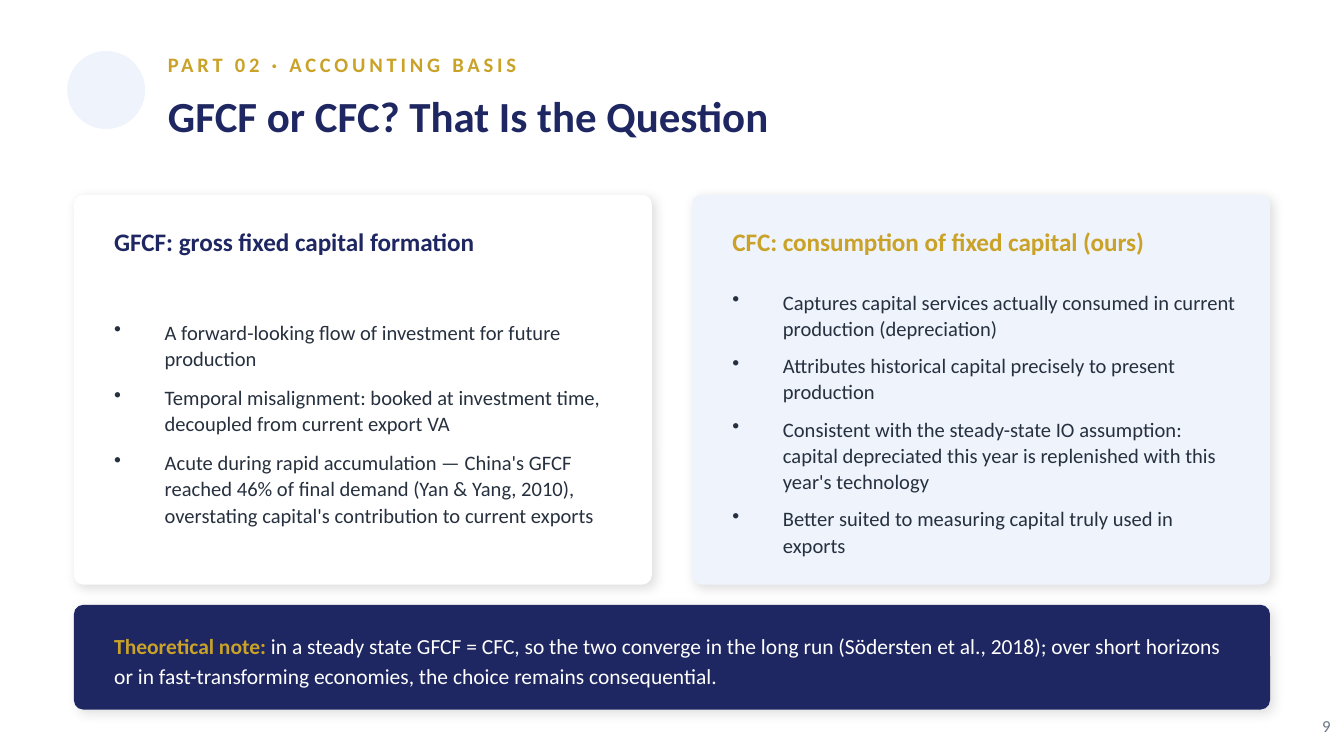
from lxml.etree import SubElement
from pptx import Presentation
from pptx.dml.color import RGBColor
from pptx.enum.shapes import MSO_SHAPE
from pptx.enum.text import MSO_ANCHOR, PP_ALIGN
from pptx.oxml.ns import qn
from pptx.util import Inches, Pt

COLORS = {
    "navy": "1E2761",
    "gold": "C9A227",
    "pale": "EEF3FC",
    "white": "FFFFFF",
    "ink": "26303E",
    "gray": "6B7585",
    "shadow": "000000",
}
FONT = "Calibri"

SECTION = "PART 02 · ACCOUNTING BASIS"
TITLE = "GFCF or CFC? That Is the Question"
PAGE_NUMBER = "9"
CARDS = [
    {
        "heading": "GFCF: gross fixed capital formation",
        "heading_color": "navy",
        "heading_width": 3.8,
        "fill": "white",
        "space_after": 7,
        "bullets": [
            "A forward-looking flow of investment for future production",
            "Temporal misalignment: booked at investment time, decoupled from current export VA",
            "Acute during rapid accumulation — China's GFCF reached 46% of final demand "
            "(Yan & Yang, 2010), overstating capital's contribution to current exports",
        ],
    },
    {
        "heading": "CFC: consumption of fixed capital (ours)",
        "heading_color": "gold",
        "heading_width": 3.9,
        "fill": "pale",
        "space_after": 6,
        "bullets": [
            "Captures capital services actually consumed in current production (depreciation)",
            "Attributes historical capital precisely to present production",
            "Consistent with the steady-state IO assumption: capital depreciated this year "
            "is replenished with this year's technology",
            "Better suited to measuring capital truly used in exports",
        ],
    },
]
NOTE = [
    ("Theoretical note: ", "gold", True),
    ("in a steady state GFCF = CFC, so the two converge in the long run "
     "(Södersten et al., 2018); over short horizons or in fast-transforming "
     "economies, the choice remains consequential.", "white", False),
]

SLIDE_WIDTH = 10
SLIDE_HEIGHT = SLIDE_WIDTH * 9 / 16
MARGIN = 0.55
GUTTER = 0.3
PADDING = 0.3
CONTENT_WIDTH = SLIDE_WIDTH - 2 * MARGIN
CARD_WIDTH = (CONTENT_WIDTH - GUTTER) / len(CARDS)
CARD_TOP, CARD_HEIGHT = 1.45, 2.9
NOTE_TOP, NOTE_HEIGHT = 4.5, 0.78
HEADER_LEFT = 1.25
BULLET_INDENT = Pt(27)


def add_soft_shadow(shape):
    effects = SubElement(shape._element.spPr, qn("a:effectLst"))
    shadow = SubElement(effects, qn("a:outerShdw"), blurRad=str(Pt(6)), dist=str(Pt(2)),
                        dir=str(45 * 60000), algn="bl", rotWithShape="0")
    color = SubElement(shadow, qn("a:srgbClr"), val=COLORS["shadow"])
    SubElement(color, qn("a:alpha"), val="13000")


def add_panel(slide, kind, left, top, width, height, fill, corner=None):
    """Add a borderless shape; a corner ratio makes it a raised card."""
    shape = slide.shapes.add_shape(kind, *map(Inches, (left, top, width, height)))
    shape.fill.solid()
    shape.fill.fore_color.rgb = RGBColor.from_string(COLORS[fill])
    shape.line.fill.background()
    if corner is None:
        shape.shadow.inherit = False
    else:
        shape.adjustments[0] = corner
        add_soft_shadow(shape)


def add_bullet(paragraph):
    properties = paragraph._p.get_or_add_pPr()
    properties.set("marL", str(BULLET_INDENT))
    properties.set("indent", str(-BULLET_INDENT))
    SubElement(properties, qn("a:buSzPct"), val="100000")
    SubElement(properties, qn("a:buChar"), char="•")


def add_text(slide, paragraphs, left, top, width, height, size=11, color="ink", bold=False,
             align=None, line_spacing=None, space_after=None, bullet=False, tracking=None):
    """Add a text box; a paragraph is a string or a list of (text, color, bold) runs."""
    box = slide.shapes.add_textbox(*map(Inches, (left, top, width, height)))
    frame = box.text_frame
    frame.word_wrap = True
    frame.vertical_anchor = MSO_ANCHOR.MIDDLE
    frame.margin_left = frame.margin_right = frame.margin_top = frame.margin_bottom = 0
    for index, content in enumerate(paragraphs):
        paragraph = frame.add_paragraph() if index else frame.paragraphs[0]
        if align is not None:
            paragraph.alignment = align
        if line_spacing:
            paragraph.line_spacing = Pt(line_spacing)
        if space_after:
            paragraph.space_after = Pt(space_after)
        if bullet:
            add_bullet(paragraph)
        runs = [(content, color, bold)] if isinstance(content, str) else content
        for text, run_color, run_bold in runs:
            run = paragraph.add_run()
            run.text = text
            run.font.name = FONT
            run.font.size = Pt(size)
            run.font.bold = run_bold
            run.font.color.rgb = RGBColor.from_string(COLORS[run_color])
            if tracking:
                run._r.get_or_add_rPr().set("spc", str(tracking * 100))


def add_card(slide, column, card):
    left = MARGIN + column * (CARD_WIDTH + GUTTER)
    text_left = left + PADDING
    add_panel(slide, MSO_SHAPE.ROUNDED_RECTANGLE, left, CARD_TOP, CARD_WIDTH, CARD_HEIGHT,
              card["fill"], corner=0.024)
    add_text(slide, [card["heading"]], text_left, CARD_TOP + 0.17, card["heading_width"], 0.35,
             size=13.5, color=card["heading_color"], bold=True)
    add_text(slide, card["bullets"], text_left, CARD_TOP + 0.57, 3.75, 2.25,
             line_spacing=14, space_after=card["space_after"], bullet=True)


def main():
    presentation = Presentation()
    presentation.slide_width = Inches(SLIDE_WIDTH)
    presentation.slide_height = Inches(SLIDE_HEIGHT)
    slide = presentation.slides.add_slide(presentation.slide_layouts[6])

    add_text(slide, [PAGE_NUMBER], 9.45, 5.25, 0.45, 0.3, size=9, color="gray",
             align=PP_ALIGN.RIGHT)
    add_panel(slide, MSO_SHAPE.OVAL, 0.5, 0.38, 0.58, 0.58, "pale")
    add_text(slide, [SECTION], HEADER_LEFT, 0.34, 8, 0.28, color="gold", bold=True, tracking=2)
    add_text(slide, [TITLE], HEADER_LEFT, 0.58, 8.3, 0.55, size=23, color="navy", bold=True)

    for column, card in enumerate(CARDS):
        add_card(slide, column, card)

    add_panel(slide, MSO_SHAPE.ROUNDED_RECTANGLE, MARGIN, NOTE_TOP, CONTENT_WIDTH, NOTE_HEIGHT,
              "navy", corner=0.09)
    add_text(slide, [NOTE], MARGIN + PADDING, NOTE_TOP + 0.1, CONTENT_WIDTH - 2 * PADDING, 0.6,
             size=11.5, line_spacing=16)

    presentation.save("out.pptx")


if __name__ == "__main__":
    main()
